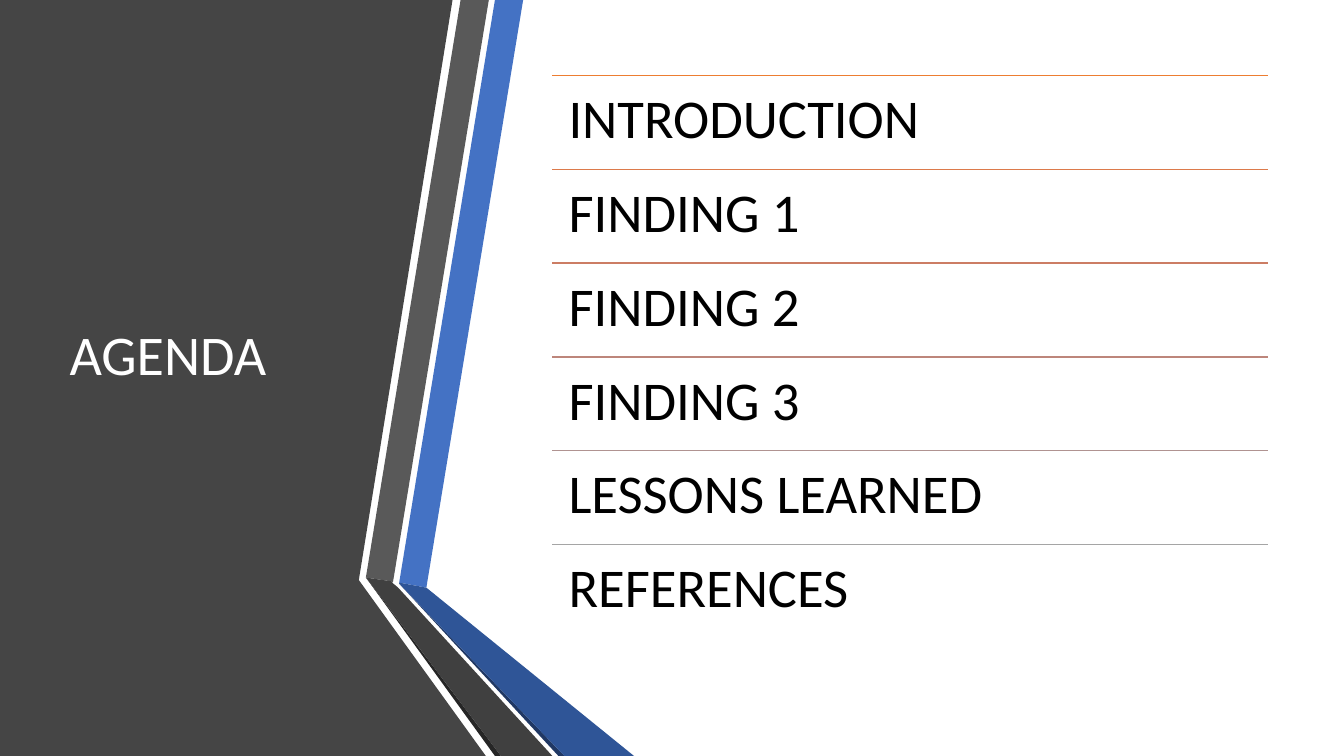
from pptx import Presentation
from pptx.dml.color import RGBColor as Rgb
from pptx.enum.shapes import MSO_CONNECTOR as Link
from pptx.enum.text import MSO_ANCHOR as Anchor
from pptx.util import Inches, Pt
from lxml.etree import SubElement
from pptx.oxml.ns import qn

COLS, ROWS = 160, 90
HUES = {
    "panel": "454545", "blue": "4472C4", "gray": "595959", "ink": "262626",
    "navy": "203864", "deep": "2F5597", "coal": "404040",
    "white": "FFFFFF", "black": "000000",
}
BANDS = [
    ("panel", [(0, 0), (53.88, 0), (42.72, 69.06), (57.84, 90), (0, 90)]),
    ("blue", [(47.52, 69.36), (50.76, 69.96), (62.28, 0), (58.92, 0)]),
    ("gray", [(58.2, 0), (54.84, 0), (43.56, 68.76), (46.8, 69.24)]),
    ("ink", [(43.56, 68.76), (58.92, 90), (59.64, 90)]),
    ("navy", [(47.52, 69.48), (66.48, 90), (67.2, 90)]),
    ("deep", [(47.52, 69.48), (67.2, 90), (75.48, 90), (50.76, 69.96),
              (47.52, 69.36)]),
    ("coal", [(65.76, 90), (47.4, 69.96), (46.68, 69.36), (46.8, 69.24),
              (43.56, 68.76), (59.64, 90)]),
]
TOPICS = [
    ("INTRODUCTION", "ED7D31"), ("FINDING 1", "DC7A4B"),
    ("FINDING 2", "CC7D64"), ("FINDING 3", "BD867B"),
    ("LESSONS LEARNED", "B09391"), ("REFERENCES", "A5A5A5"),
]
LEFT, TOP, WIDE, STEP = 65.76, 9, 85.2, 11.16


class Deck:
    font = "Calibri"

    def __init__(self):
        self.show = Presentation()
        self.show.slide_width = Inches(13.33)
        self.show.slide_height = Inches(7.5)
        self.slide = self.show.slides.add_slide(self.show.slide_layouts[6])

    def x(self, cols):
        return round(self.show.slide_width * cols / COLS)

    def y(self, rows):
        return round(self.show.slide_height * rows / ROWS)

    def band(self, hue, dots):
        first, *rest = [(self.x(c), self.y(r)) for c, r in dots]
        pen = self.slide.shapes.build_freeform(*first)
        pen.add_line_segments(rest)
        shape = pen.convert_to_shape()
        shape.shadow.inherit = False
        shape.fill.solid()
        shape.fill.fore_color.rgb = Rgb.from_string(HUES[hue])
        shape.line.fill.background()

    def rule(self, left, top, wide, color):
        line = self.slide.shapes.add_connector(
            Link.STRAIGHT, self.x(left), self.y(top),
            self.x(left + wide), self.y(top))
        line.line.color.rgb = Rgb.from_string(color)
        line.line.width = Pt(1)
        SubElement(line._element.spPr, qn("a:effectLst"))

    def text(self, words, left, top, wide, high, size, hue, anchor, pad):
        box = self.slide.shapes.add_textbox(
            self.x(left), self.y(top), self.x(wide), self.y(high))
        frame = box.text_frame
        frame.word_wrap = True
        frame.vertical_anchor = anchor
        frame.margin_left = frame.margin_right = self.x(pad)
        frame.margin_top = frame.margin_bottom = self.y(pad)
        frame.text = words
        para = frame.paragraphs[0]
        para.line_spacing = 0.9
        font = para.runs[0].font
        font.name, font.size = self.font, Pt(size)
        font.color.rgb = Rgb.from_string(HUES[hue])


def main():
    deck = Deck()
    for hue, dots in BANDS:
        deck.band(hue, dots)
    deck.text("AGENDA", 7.08, TOP, 36.5, 67, 40, "white", Anchor.MIDDLE, 1.2)
    for i, (topic, color) in enumerate(TOPICS):
        top = TOP + i * STEP
        deck.rule(LEFT, top, WIDE, color)
        deck.text(topic, LEFT, top, WIDE, STEP, 39, "black", Anchor.TOP, 1.92)
    deck.show.save("out.pptx")


if __name__ == "__main__":
    main()
